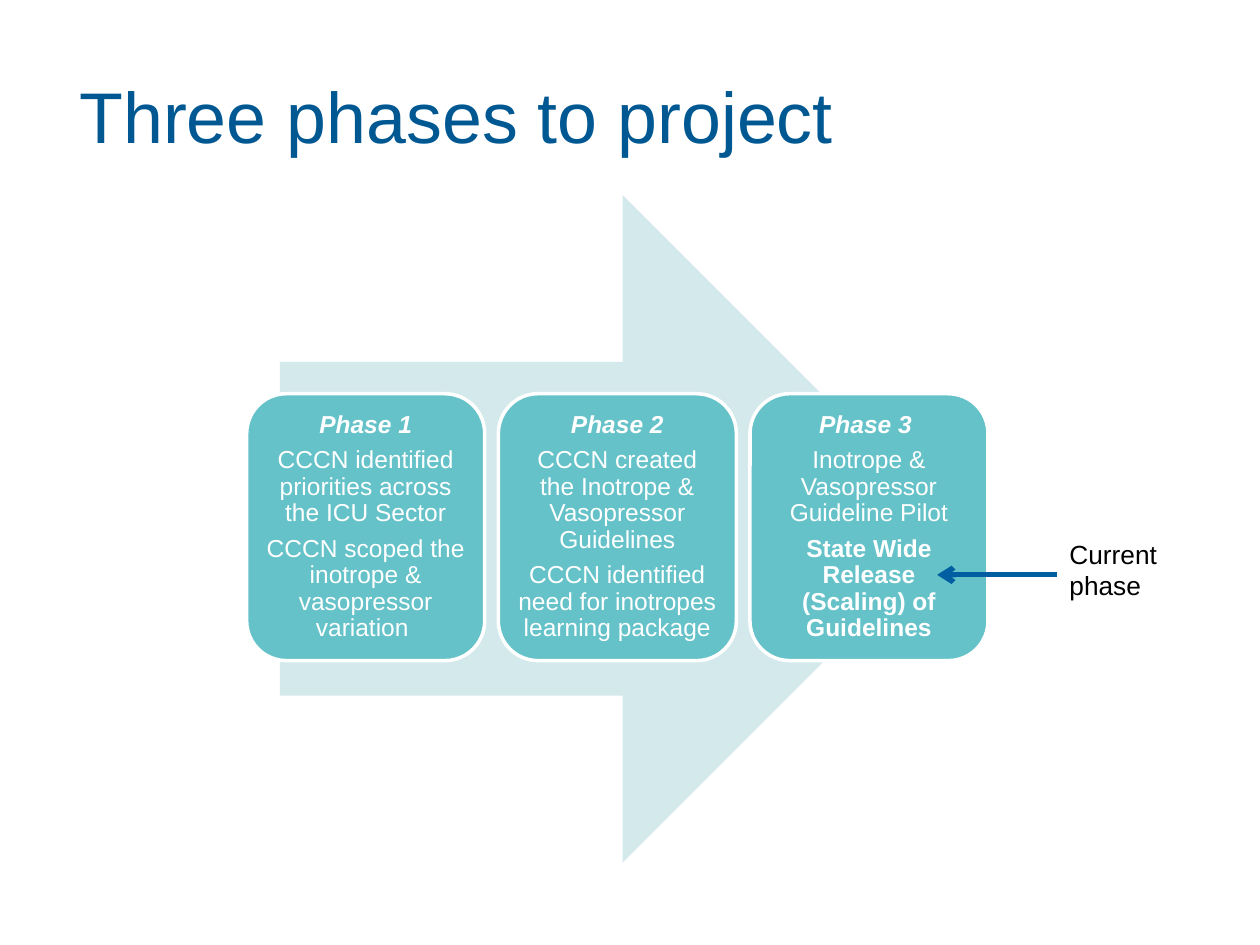
from lxml import etree
from pptx import Presentation
from pptx.dml.color import RGBColor
from pptx.enum import shapes, text
from pptx.oxml.ns import qn
from pptx.util import Pt

NAVY = RGBColor(0x00, 0x58, 0x92)
BLUE = RGBColor(0x00, 0x5E, 0xA1)
TEAL = RGBColor(0x64, 0xC2, 0xC8)
PALE = RGBColor(0xD3, 0xE9, 0xEB)
WHITE = RGBColor(0xFF, 0xFF, 0xFF)
BLACK = RGBColor(0x00, 0x00, 0x00)


def write(p, words, size, color, bold=False, italic=False, align=text.PP_ALIGN.LEFT):
    p.alignment = align
    r = p.add_run()
    r.text = words
    r.font.name = "Arial"
    r.font.size = Pt(size)
    r.font.color.rgb = color
    r.font.bold = bold
    r.font.italic = italic


def set_frame(tf, anchor, side, top):
    tf.word_wrap = True
    tf.vertical_anchor = anchor
    tf.margin_left = tf.margin_right = Pt(side)
    tf.margin_top = tf.margin_bottom = Pt(top)


prs = Presentation()
prs.slide_width, prs.slide_height = Pt(720), Pt(540)
s = prs.slides.add_slide(prs.slide_layouts[6])

title = s.shapes.add_textbox(Pt(45.4), Pt(44.6), Pt(625), Pt(46))
set_frame(title.text_frame, text.MSO_ANCHOR.MIDDLE, 0, 0)
p = title.text_frame.paragraphs[0]
p.line_spacing = Pt(45.4)
write(p, "Three phases to project", 41, NAVY)

arrow = s.shapes.add_shape(
    shapes.MSO_SHAPE.RIGHT_ARROW, Pt(160), Pt(111.5), Pt(386.5), Pt(381.5))
arrow.shadow.inherit = False
arrow.fill.solid()
arrow.fill.fore_color.rgb = PALE
arrow.line.fill.background()

phases = [
    ("Phase 1", "CCCN identified priorities across the ICU Sector",
     "CCCN scoped the inotrope & vasopressor variation "),
    ("Phase 2", "CCCN created the Inotrope & Vasopressor Guidelines",
     "CCCN identified need for inotropes learning package"),
    ("Phase 3 ", "Inotrope & Vasopressor Guideline Pilot",
     "State Wide Release (Scaling) of Guidelines"),
]
bold_lines = {(0, 0), (1, 0), (2, 0), (2, 2)}
for i, lines in enumerate(phases):
    sp = s.shapes.add_shape(
        shapes.MSO_SHAPE.ROUNDED_RECTANGLE, Pt(141 + 143.8 * i), Pt(225), Pt(136), Pt(152.5))
    sp.shadow.inherit = False
    sp.fill.solid()
    sp.fill.fore_color.rgb = TEAL
    sp.line.color.rgb = WHITE
    sp.line.width = Pt(2)
    tf = sp.text_frame
    set_frame(tf, text.MSO_ANCHOR.MIDDLE, 4.2, 4.2)
    for j, words in enumerate(lines):
        p = tf.paragraphs[0] if j == 0 else tf.add_paragraph()
        p.line_spacing = 0.9
        p.space_after = Pt(5)
        write(p, words, 14, WHITE, bold=(i, j) in bold_lines, italic=j == 0,
              align=text.PP_ALIGN.CENTER)

pointer = s.shapes.add_connector(
    shapes.MSO_CONNECTOR.STRAIGHT, Pt(604), Pt(328.5), Pt(535.5), Pt(328.5))
pointer.line.color.rgb = BLUE
pointer.line.width = Pt(3)
etree.SubElement(pointer.line._get_or_add_ln(), qn("a:tailEnd"), type="arrow")
etree.SubElement(pointer._element.spPr, qn("a:effectLst"))

label = s.shapes.add_textbox(Pt(604), Pt(304), Pt(85), Pt(44))
set_frame(label.text_frame, text.MSO_ANCHOR.TOP, 7.2, 3.6)
write(label.text_frame.paragraphs[0], "Current phase", 15, BLACK)

prs.save("out.pptx")
